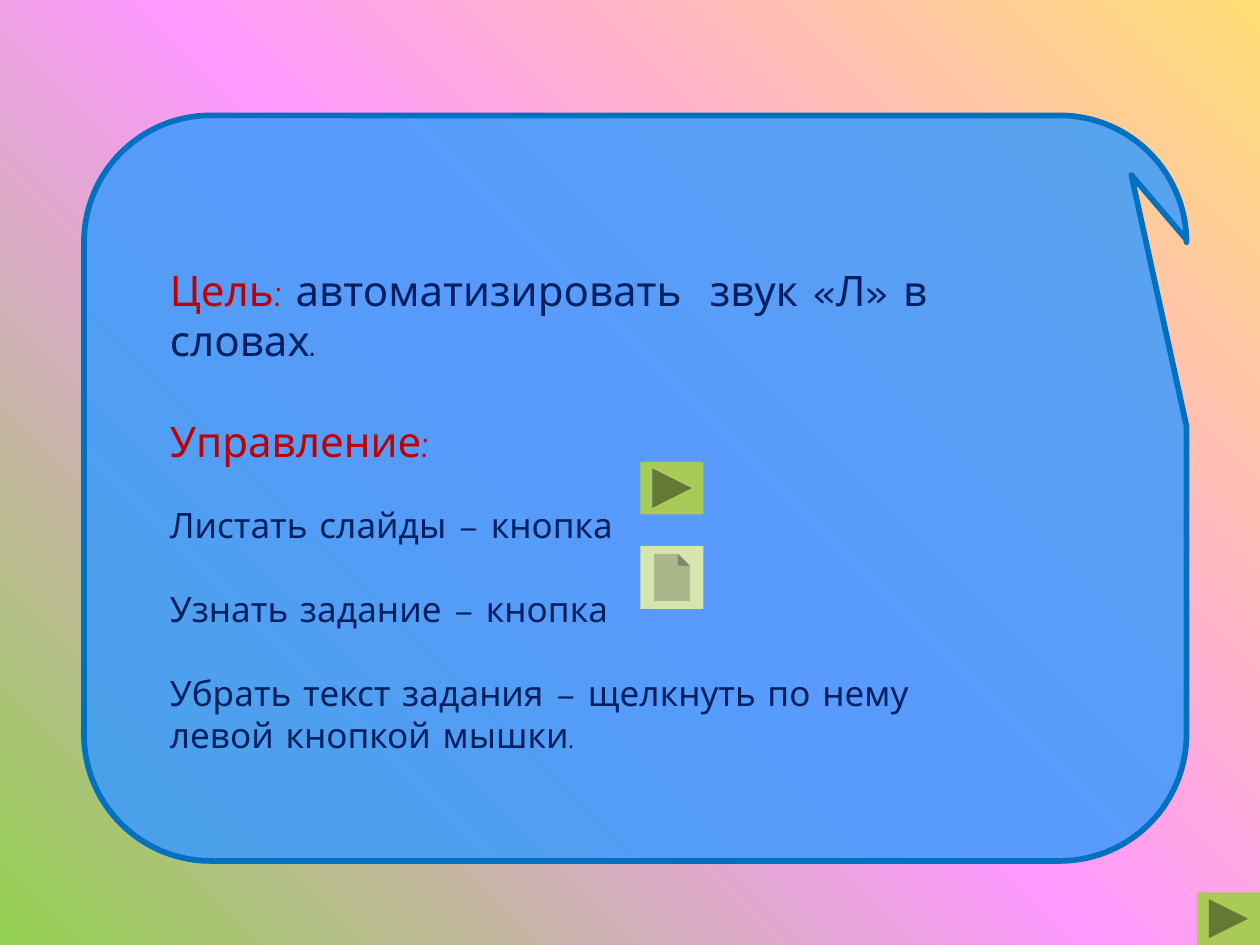
"""Build a slide stating the goal and the controls of a speech exercise."""
from copy import deepcopy
from dataclasses import dataclass

from lxml.etree import SubElement
from pptx import Presentation
from pptx.dml.color import RGBColor
from pptx.enum.shapes import MSO_SHAPE
from pptx.oxml.ns import qn
from pptx.shapes.autoshape import Shape
from pptx.slide import Slide
from pptx.util import Pt

PX = 7620
FONT = "Comic Neue"
GREEN = RGBColor(0x92, 0xD0, 0x50)
PINK = RGBColor(0xFF, 0x99, 0xFF)
YELLOW = RGBColor(0xFF, 0xDE, 0x75)
BLUE = RGBColor(0x37, 0x9B, 0xFF)
EDGE = RGBColor(0x00, 0x70, 0xC0)
NAVY = RGBColor(0x00, 0x20, 0x60)
RED = RGBColor(0xC0, 0x00, 0x00)
LIME = RGBColor(0xA9, 0xCA, 0x56)
PALE = RGBColor(0xD5, 0xE5, 0xAD)


@dataclass(frozen=True)
class Block:
    kind: MSO_SHAPE
    left: int
    top: int
    width: int
    height: int
    color: RGBColor


@dataclass(frozen=True)
class Line:
    runs: tuple[tuple[str, RGBColor], ...]
    size: int
    before: float = 0


BUBBLE = Block(MSO_SHAPE.ROUNDED_RECTANGULAR_CALLOUT, 80, 110, 1050, 710, BLUE)
NEXT = MSO_SHAPE.ACTION_BUTTON_FORWARD_OR_NEXT
BUTTONS = (
    Block(NEXT, 610, 440, 60, 50, LIME),
    Block(MSO_SHAPE.ACTION_BUTTON_DOCUMENT, 610, 520, 60, 60, PALE),
    Block(NEXT, 1140, 850, 60, 50, LIME),
)
LINES = (
    Line((("Цель:", RED), (" автоматизировать  звук «Л» в словах.", NAVY)), 24),
    Line((("Управление:", RED),), 24, 28.8),
    Line((("Листать слайды – кнопка", NAVY),), 20, 21.5),
    Line((("Узнать задание – кнопка", NAVY),), 20, 24),
    Line((("Убрать текст задания – щелкнуть по нему", NAVY),), 20, 24),
    Line((("левой кнопкой мышки.", NAVY),), 20),
)


def paint(slide: Slide) -> None:
    """Fill the background with a three-stop diagonal gradient."""
    fill = slide.background.fill
    fill.gradient()
    fill.gradient_angle = 45
    stops = slide._element.find(".//" + qn("a:gsLst"))
    stops.insert(1, deepcopy(stops[0]))
    for index, color in enumerate((GREEN, PINK, YELLOW)):
        stop = fill.gradient_stops[index]
        stop.color.rgb = color
        stop.position = index / 2


def draw(slide: Slide, block: Block) -> Shape:
    """Add one flat preset shape."""
    box = (block.left, block.top, block.width, block.height)
    shape = slide.shapes.add_shape(block.kind, *(n * PX for n in box))
    shape.shadow.inherit = False
    shape.fill.solid()
    shape.fill.fore_color.rgb = block.color
    shape.line.fill.background()
    return shape


def bubble(slide: Slide) -> None:
    """Add the translucent speech bubble."""
    shape = draw(slide, BUBBLE)
    for index, value in enumerate((0.45, -0.42, 0.17)):
        shape.adjustments[index] = value
    shape.line.color.rgb = EDGE
    shape.line.width = Pt(3.25)
    color = shape._element.spPr.find(qn("a:solidFill"))[0]
    SubElement(color, qn("a:alpha"), val="83000")


def write(slide: Slide) -> None:
    """Add the goal and the instructions."""
    box = slide.shapes.add_textbox(150 * PX, 246 * PX, 877 * PX, 480 * PX)
    frame = box.text_frame
    frame.word_wrap = True
    for index, line in enumerate(LINES):
        para = frame.add_paragraph() if index else frame.paragraphs[0]
        if line.before:
            para.space_before = Pt(line.before)
        for text, color in line.runs:
            run = para.add_run()
            run.text = text
            run.font.name = FONT
            run.font.size = Pt(line.size)
            run.font.color.rgb = color


def main() -> None:
    """Build and save the slide."""
    deck = Presentation()
    deck.slide_width = 1200 * PX
    deck.slide_height = 900 * PX
    slide = deck.slides.add_slide(deck.slide_layouts[6])
    paint(slide)
    bubble(slide)
    write(slide)
    for button in BUTTONS:
        draw(slide, button)
    deck.save("out.pptx")


if __name__ == "__main__":
    main()
